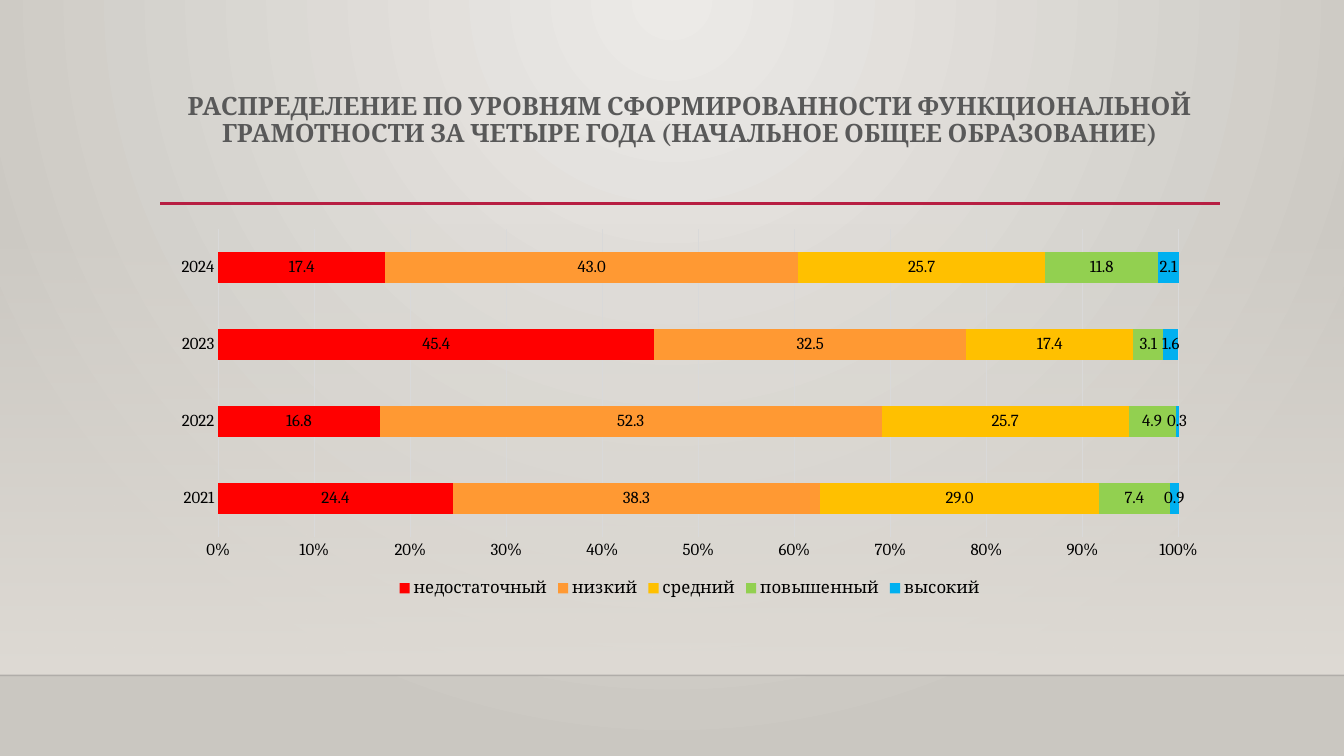
from lxml import etree
from pptx import Presentation
from pptx.chart.data import CategoryChartData
from pptx.dml.color import RGBColor
from pptx.enum.chart import XL_CHART_TYPE, XL_LEGEND_POSITION, XL_TICK_MARK
from pptx.enum.shapes import MSO_CONNECTOR, MSO_SHAPE
from pptx.enum.text import MSO_ANCHOR, PP_ALIGN
from pptx.oxml.ns import qn
from pptx.util import Inches, Pt

BAR_TYPE = XL_CHART_TYPE.BAR_STACKED_100
LEGEND_BOTTOM = XL_LEGEND_POSITION.BOTTOM
NO_TICK = XL_TICK_MARK.NONE
STRAIGHT = MSO_CONNECTOR.STRAIGHT
RECTANGLE = MSO_SHAPE.RECTANGLE
TOP = MSO_ANCHOR.TOP
CENTER = PP_ALIGN.CENTER

FONT = "Cambria"
WIDTH, HEIGHT = 13.33, 7.5
LEFT, CONTENT_WIDTH = 1.59, 10.5
FLOOR_TOP = 6.7
COLORS = {
    "glow": "ECEAE7",
    "edge": "CAC7C1",
    "wall": "DFDBD5",
    "floor_line": "000001",
    "accent": "B71E42",
    "title": "595959",
    "text": "000000",
    "grid": "D9D9D9",
}
TITLE = (
    "РАСПРЕДЕЛЕНИЕ ПО УРОВНЯМ СФОРМИРОВАННОСТИ ФУНКЦИОНАЛЬНОЙ "
    "ГРАМОТНОСТИ ЗА ЧЕТЫРЕ ГОДА (НАЧАЛЬНОЕ ОБЩЕЕ ОБРАЗОВАНИЕ)"
)
YEARS = ["2021", "2022", "2023", "2024"]
LEVELS = [
    ("недостаточный", "FF0000", [24.4, 16.8, 45.4, 17.4]),
    ("низкий", "FF9933", [38.3, 52.3, 32.5, 43]),
    ("средний", "FFC000", [29, 25.7, 17.4, 25.7]),
    ("повышенный", "92D050", [7.4, 4.9, 3.1, 11.8]),
    ("высокий", "00B0F0", [0.9, 0.3, 1.6, 2.1]),
]


def rgb(name):
    """Return the named colour."""
    return RGBColor.from_string(COLORS[name])


def apply(target, **values):
    """Set each given attribute on the target."""
    for name, value in values.items():
        setattr(target, name, value)


def style_font(font, size=12, color="text", bold=False):
    """Give a font the slide's typeface, size and colour."""
    apply(font, name=FONT, size=Pt(size), bold=bold)
    font.color.rgb = rgb(color)


def set_alpha(container, percent):
    """Set the opacity of the first colour inside an element."""
    color = next(container.iter(qn("a:srgbClr")))
    etree.SubElement(color, qn("a:alpha"), val=str(percent * 1000))


def fill_gradient(fill, start, end):
    """Fill with a gradient of two colours."""
    fill.gradient()
    for stop, name, position in zip(fill.gradient_stops, (start, end), (0, 1)):
        stop.color.rgb = rgb(name)
        stop.position = position


def paint_background(page):
    """Paint a round glow from the top centre of the page."""
    background = page.background
    fill_gradient(background.fill, "glow", "edge")
    linear = next(page.element.iter(qn("a:lin")))
    circle = etree.Element(qn("a:path"), path="circle")
    etree.SubElement(
        circle, qn("a:fillToRect"), l="43000", t="0", r="43000", b="100000"
    )
    linear.getparent().replace(linear, circle)


def add_wall(page, top, height):
    """Add a full-width panel that fades in downwards."""
    wall = page.shapes.add_shape(
        RECTANGLE, 0, Inches(top), Inches(WIDTH), Inches(height)
    )
    wall.shadow.inherit = False
    wall.line.fill.background()
    fill_gradient(wall.fill, "wall", "wall")
    wall.fill.gradient_angle = 270
    set_alpha(wall.element.spPr, 0)


def add_rule(page, left, right, top, color, width, opacity=100):
    """Add a horizontal line."""
    rule = page.shapes.add_connector(
        STRAIGHT, Inches(left), Inches(top), Inches(right), Inches(top)
    )
    rule.line.width = Pt(width)
    rule.line.color.rgb = rgb(color)
    if opacity < 100:
        set_alpha(rule.element.spPr, opacity)
    etree.SubElement(rule.element.spPr, qn("a:effectLst"))


def set_title(page):
    """Place and format the title."""
    title = page.shapes.title
    apply(
        title,
        left=Inches(LEFT),
        top=Inches(0.88),
        width=Inches(CONTENT_WIDTH),
        height=Inches(1.15),
    )
    frame = title.text_frame
    apply(frame, text=TITLE, word_wrap=True, vertical_anchor=TOP)
    para = frame.paragraphs[0]
    apply(para, alignment=CENTER, line_spacing=0.9)
    style_font(para.runs[0].font, 18, "title", True)


def style_axes(chart):
    """Format the year axis and the percent axis."""
    for axis in (chart.category_axis, chart.value_axis):
        apply(axis, major_tick_mark=NO_TICK, minor_tick_mark=NO_TICK)
        style_font(axis.tick_labels.font)
    values = chart.value_axis
    apply(values, has_major_gridlines=True, minimum_scale=0, maximum_scale=1,
          major_unit=0.1)
    apply(values.tick_labels, number_format="0%", number_format_is_linked=False)
    values.format.line.fill.background()
    for line in (chart.category_axis.format.line, values.major_gridlines.format.line):
        line.width = Pt(0.75)
        line.color.rgb = rgb("grid")


def style_series(series, color):
    """Colour one level and show its values."""
    series.format.fill.solid()
    series.format.fill.fore_color.rgb = RGBColor.from_string(color)
    series.invert_if_negative = False
    labels = series.data_labels
    apply(labels, show_value=True, number_format="0.0", number_format_is_linked=False)
    style_font(labels.font)


def add_level_chart(page):
    """Add the stacked bars of levels by year."""
    data = CategoryChartData(number_format="0.0")
    data.categories = YEARS
    for name, _, values in LEVELS:
        data.add_series(name, values)
    chart = page.shapes.add_chart(
        BAR_TYPE, Inches(LEFT), Inches(2.2), Inches(CONTENT_WIDTH), Inches(3.77), data
    ).chart
    apply(chart, has_title=False, has_legend=True)
    style_font(chart.font)
    apply(chart.legend, position=LEGEND_BOTTOM, include_in_layout=False)
    style_font(chart.legend.font)
    plot = chart.plots[0]
    apply(plot, gap_width=150, overlap=100, vary_by_categories=False)
    style_axes(chart)
    for series, (_, color, _) in zip(plot.series, LEVELS):
        style_series(series, color)


def main():
    """Build and save the slide."""
    deck = Presentation()
    apply(deck, slide_width=Inches(WIDTH), slide_height=Inches(HEIGHT))
    page = deck.slides.add_slide(deck.slide_layouts.get_by_name("Title Only"))
    paint_background(page)
    add_wall(page, 2.21, FLOOR_TOP - 2.21)
    add_rule(page, 0, WIDTH, FLOOR_TOP, "floor_line", 1, 20)
    add_rule(page, LEFT, 12.1, 2.02, "accent", 2.5)
    set_title(page)
    add_level_chart(page)
    deck.save("out.pptx")


if __name__ == "__main__":
    main()
